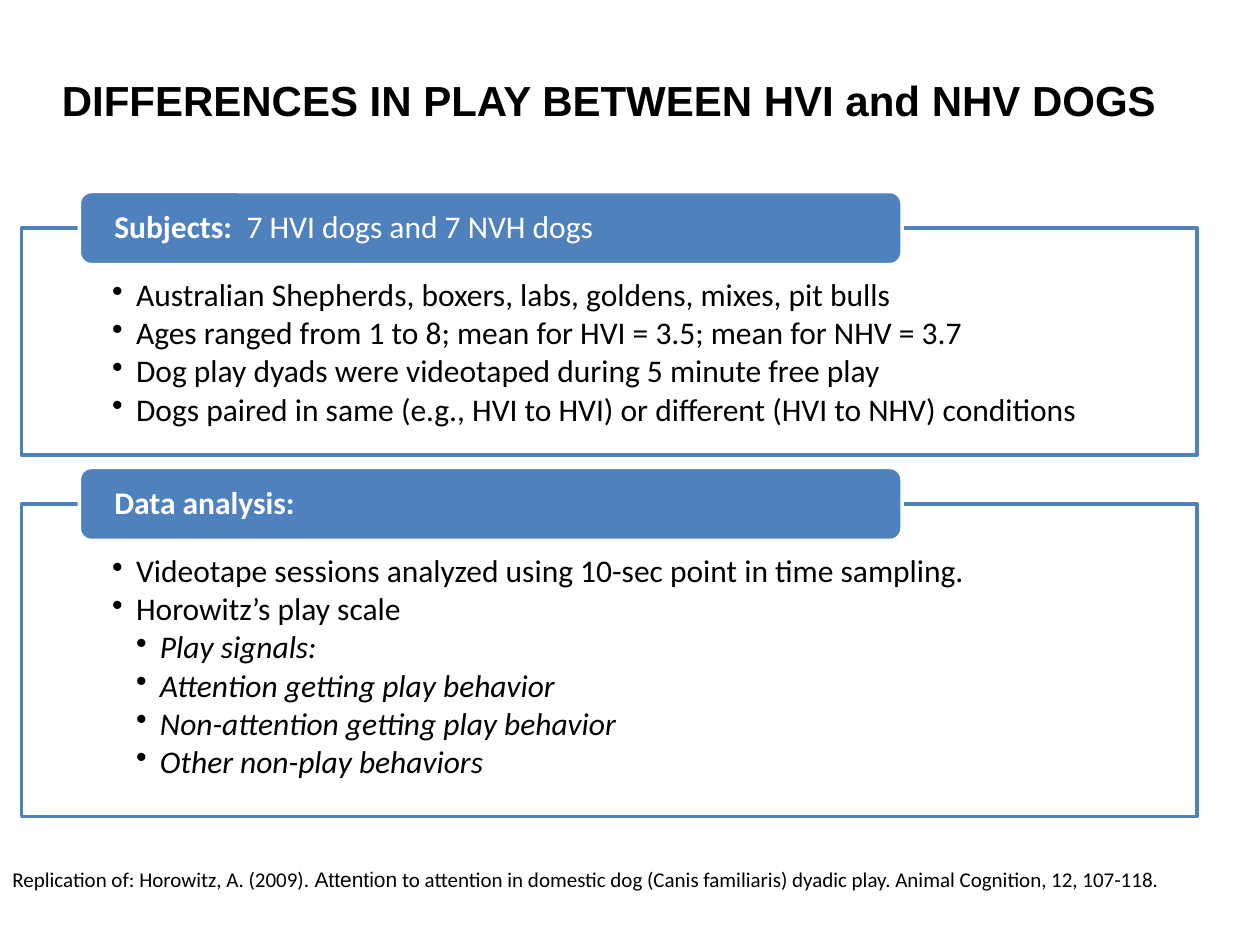
from pptx import Presentation
from pptx.dml.color import RGBColor
from pptx.enum import shapes, text
from pptx.oxml import parse_xml
from pptx.oxml.ns import nsdecls
from pptx.util import Inches, Pt

BLUE, WHITE, BLACK = "4F81BD", "FFFFFF", "000000"

# Content
TITLE = "DIFFERENCES IN PLAY BETWEEN HVI and NHV DOGS "
# Each section: top and height of the frame, heading runs, (level, bullet text)
SECTIONS = [
    (1.81, 1.8, [("Subjects:  ", True), ("7 HVI dogs and 7 NVH dogs", False)], [
        (1, "Australian Shepherds, boxers, labs, goldens, mixes, pit bulls"),
        (1, "Ages ranged from 1 to 8; mean for HVI = 3.5; mean for NHV = 3.7"),
        (1, "Dog play dyads were videotaped during 5 minute free play"),
        (1, "Dogs paired in same (e.g., HVI to HVI) or different (HVI to NHV) conditions"),
    ]),
    (4, 2.48, [("Data analysis:", True)], [
        (1, "Videotape sessions analyzed using 10-sec point in time sampling."),
        (1, "Horowitz’s play scale"),
        (2, "Play signals:"),
        (2, "Attention getting play behavior"),
        (2, "Non-attention getting play behavior"),
        (2, "Other non-play behaviors"),
    ]),
]
CITATION = [
    ("Replication of: Horowitz, A. (2009). ", "Calibri"),
    ("Attention", "Arial"),
    (" to attention in domestic dog (Canis familiaris) dyadic play. "
     "Animal Cognition, 12, 107-118.", "Calibri"),
]

# Layout
FRAME_LEFT, FRAME_WIDTH = 0.17, 9.33
TAB_LEFT, TAB_WIDTH, TAB_HEIGHT = 0.63, 6.53, 0.58
INDENT = 0.19


def color(value):
    return RGBColor.from_string(value)


def style(font, size, name="Calibri", fill=BLACK, bold=False, italic=False):
    font.size, font.name, font.bold, font.italic = Pt(size), name, bold, italic
    font.color.rgb = color(fill)


def add_panel(page, kind, place, fill, line, insets, anchor):
    shape = page.shapes.add_shape(kind, *map(Inches, place))
    shape.shadow.inherit = False
    shape.fill.solid()
    shape.fill.fore_color.rgb = color(fill)
    shape.line.color.rgb = color(line)
    shape.line.width = Pt(2)
    frame = shape.text_frame
    frame.word_wrap = True
    frame.vertical_anchor = anchor
    (frame.margin_left, frame.margin_top,
     frame.margin_right, frame.margin_bottom) = map(Inches, insets)
    return frame


def add_bullet(para, level):
    para.level = level
    props = para._p.get_or_add_pPr()
    props.set("marL", str(Inches(INDENT * level)))
    props.set("indent", str(-Inches(INDENT)))
    props.append(parse_xml(f'<a:buChar {nsdecls("a")} char="•"/>'))


def add_section(page, top, height, heading, bullets):
    # Frame with its bullet list
    frame = add_panel(page, shapes.MSO_SHAPE.RECTANGLE,
                      (FRAME_LEFT, top, FRAME_WIDTH, height), WHITE, BLUE,
                      (0.72, 0.41, 0.72, 0.14), text.MSO_ANCHOR.TOP)
    frame.text = "\n".join(words for _, words in bullets)
    for para, (level, _) in zip(frame.paragraphs, bullets):
        add_bullet(para, level)
        para.alignment = text.PP_ALIGN.LEFT
        para.line_spacing = 0.9
        para.space_after = Pt(2.3)
        style(para.runs[0].font, 18, italic=level == 2)

    # Heading tab, centred on the top edge of the frame
    tab = add_panel(page, shapes.MSO_SHAPE.ROUNDED_RECTANGLE,
                    (TAB_LEFT, top - TAB_HEIGHT / 2, TAB_WIDTH, TAB_HEIGHT),
                    BLUE, WHITE, (0.25, 0, 0.25, 0), text.MSO_ANCHOR.MIDDLE)
    para = tab.paragraphs[0]
    para.alignment = text.PP_ALIGN.LEFT
    para.line_spacing = 0.9
    for words, bold in heading:
        span = para.add_run()
        span.text = words
        style(span.font, 18, fill=WHITE, bold=bold)


def main():
    deck = Presentation()
    deck.slide_width, deck.slide_height = Inches(10), Inches(7.5)
    page = deck.slides.add_slide(deck.slide_layouts[5])

    # Title
    title = page.shapes.title
    title.left, title.top = Inches(0.17), Inches(0.17)
    title.width, title.height = Inches(9.42), Inches(1.25)
    title.text_frame.text = TITLE
    title.text_frame.vertical_anchor = text.MSO_ANCHOR.MIDDLE
    para = title.text_frame.paragraphs[0]
    para.alignment = text.PP_ALIGN.CENTER
    style(para.runs[0].font, 24, "Arial", bold=True)

    # Sections
    for section in SECTIONS:
        add_section(page, *section)

    # Citation
    box = page.shapes.add_textbox(Inches(0), Inches(6.83), Inches(9.58), Inches(0.3))
    box.text_frame.word_wrap = True
    for words, name in CITATION:
        span = box.text_frame.paragraphs[0].add_run()
        span.text = words
        style(span.font, 12, name)

    deck.save("out.pptx")


if __name__ == "__main__":
    main()
